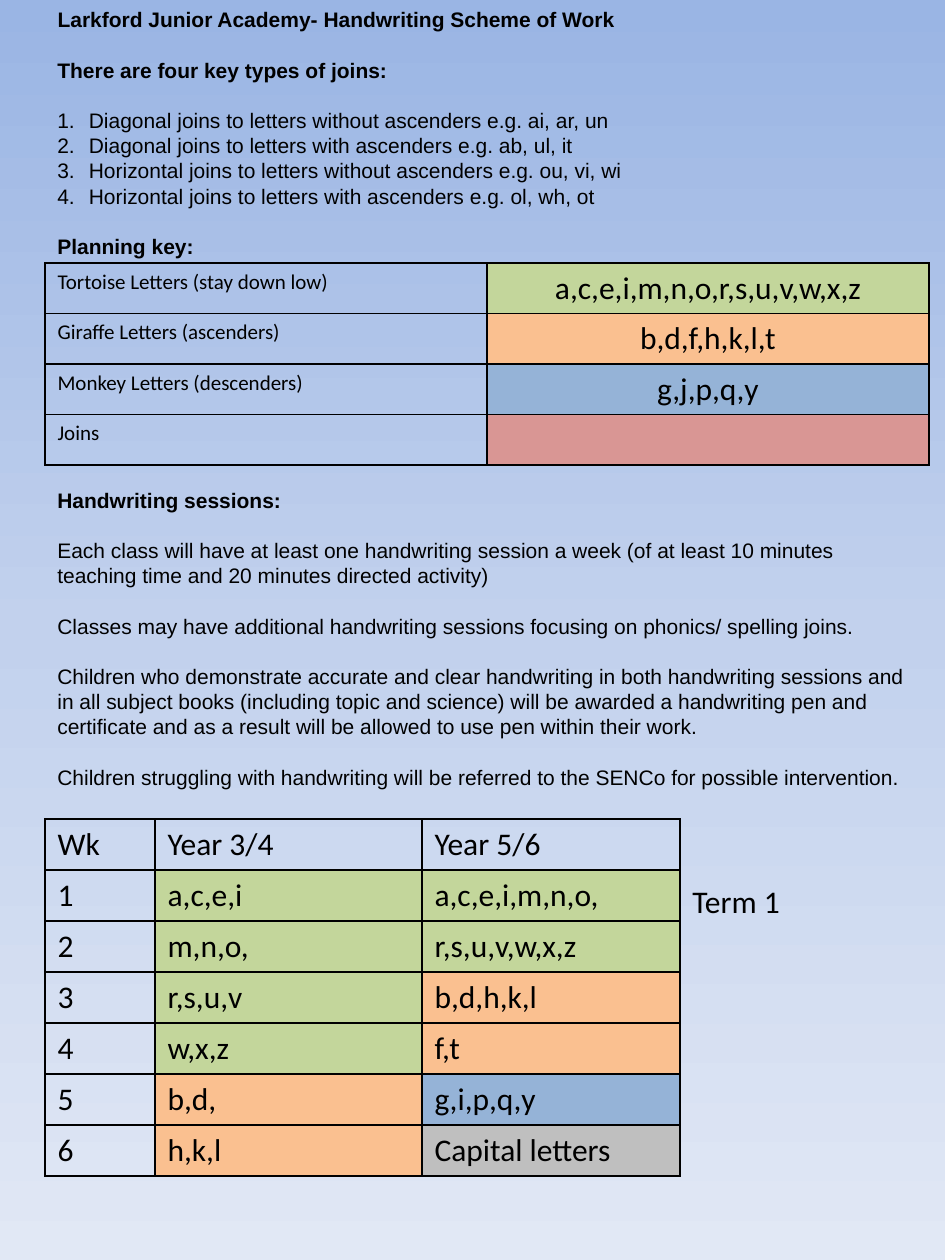
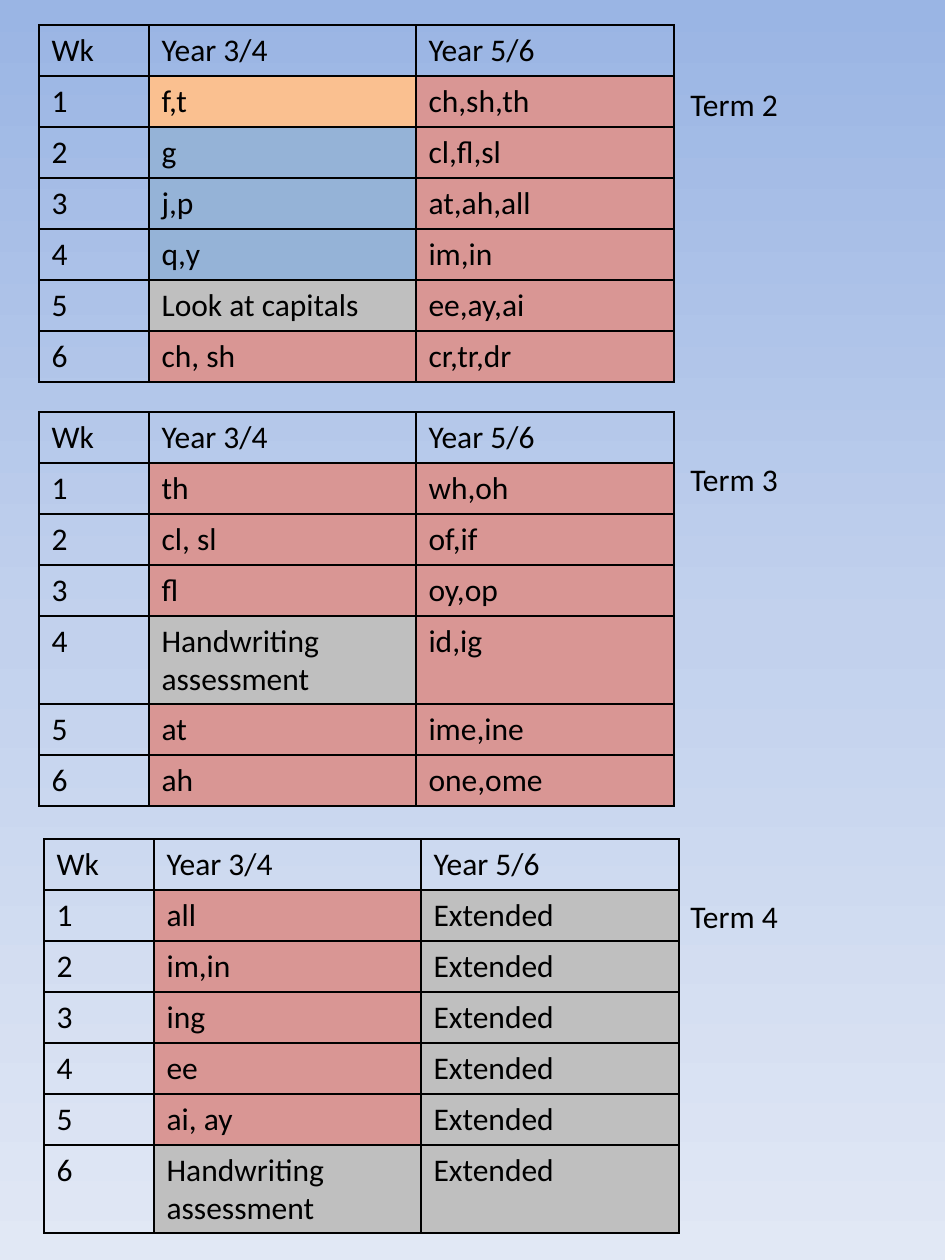
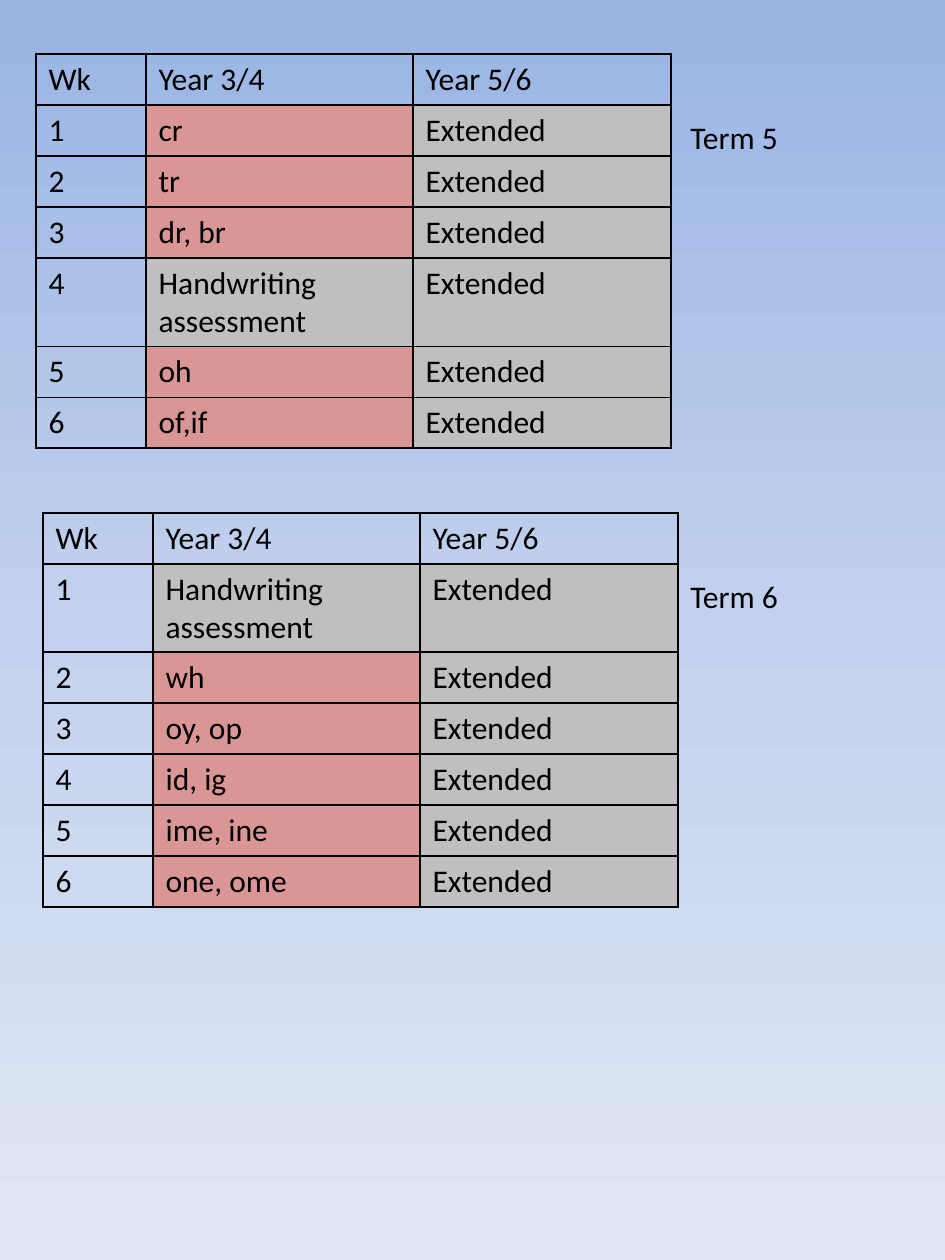
from dataclasses import dataclass

from pptx import Presentation
from pptx.dml.color import RGBColor
from pptx.enum.text import MSO_ANCHOR, MSO_AUTO_SIZE, PP_ALIGN
from pptx.oxml import parse_xml
from pptx.oxml.ns import nsdecls
from pptx.util import Emu, Pt
from copy import deepcopy

TOP = MSO_ANCHOR.TOP
GROW = MSO_AUTO_SIZE.SHAPE_TO_FIT_TEXT
FIXED = MSO_AUTO_SIZE.NONE
LEFT, CENTER = PP_ALIGN.LEFT, PP_ALIGN.CENTER


@dataclass(frozen=True)
class Theme:
    ink: str = "000000"
    low: str = "C3D69B"
    tall: str = "FAC090"
    tail: str = "95B3D7"
    join: str = "D99694"
    other: str = "BFBFBF"
    sky: tuple = ((0, "9AB5E4"), (0.5, "C2D1ED"), (1, "E1E8F5"))
    prose: str = "Arial"
    grid: str = "Calibri"
    small: int = 12
    large: int = 18
    line: float = 14.4


THEME = Theme()

# Planning key: label, letters, colour
KEY = [
    ("Tortoise Letters (stay down low)", "a,c,e,i,m,n,o,r,s,u,v,w,x,z", THEME.low),
    ("Giraffe Letters (ascenders)", "b,d,f,h,k,l,t", THEME.tall),
    ("Monkey Letters (descenders)", "g,j,p,q,y", THEME.tail),
    ("Joins", "", THEME.join),
]

TITLE = "Larkford Junior Academy- Handwriting Scheme of Work"
JOINS = [
    "Diagonal joins to letters without ascenders e.g. ai, ar, un",
    "Diagonal joins to letters with ascenders e.g. ab, ul, it",
    "Horizontal joins to letters without ascenders e.g. ou, vi, wi",
    "Horizontal joins to letters with ascenders e.g. ol, wh, ot",
]
RULES = [
    "Each class will have at least one handwriting session a week (of at least "
    "10 minutes teaching time and 20 minutes directed activity)",
    "Classes may have additional handwriting sessions focusing on phonics/ spelling joins.",
    "Children who demonstrate accurate and clear handwriting in both handwriting "
    "sessions and in all subject books (including topic and science) will be awarded "
    "a handwriting pen and certificate and as a result will be allowed to use pen "
    "within their work.",
    "Children struggling with handwriting will be referred to the SENCo for "
    "possible intervention.",
]

# Weekly plans
TEST = "Handwriting assessment"
EXTRA = ["Extended"] * 6
HEAD = ("Wk", "Year 3/4", "Year 5/6")
COLS = (110, 267, 258)
ROW, DEEP = 51, 88

# Each slide's terms: table corner, label corner, Year 3/4, Year 5/6
PLANS = [
    [
        ((45, 819), (680, 876),
         ["a,c,e,i", "m,n,o,", "r,s,u,v", "w,x,z", "b,d,", "h,k,l"],
         ["a,c,e,i,m,n,o,", "r,s,u,v,w,x,z", "b,d,h,k,l", "f,t", "g,i,p,q,y",
          "Capital letters"]),
    ],
    [
        ((39, 25), (678, 79),
         ["f,t", "g", "j,p", "q,y", "Look at capitals", "ch, sh"],
         ["ch,sh,th", "cl,fl,sl", "at,ah,all", "im,in", "ee,ay,ai", "cr,tr,dr"]),
        ((39, 412), (678, 454),
         ["th", "cl, sl", "fl", TEST, "at", "ah"],
         ["wh,oh", "of,if", "oy,op", "id,ig", "ime,ine", "one,ome"]),
        ((44, 839), (678, 891),
         ["all", "im,in", "ing", "ee", "ai, ay", TEST], EXTRA),
    ],
    [
        ((36, 54), (678, 112),
         ["cr", "tr", "dr, br", TEST, "oh", "of,if"], EXTRA),
        ((43, 513), (678, 571),
         [TEST, "wh", "oy, op", "id, ig", "ime, ine", "one, ome"], EXTRA),
    ],
]


def px(n):
    return Emu(round(n * 914400 / 126))


def place(shape, left, top, width, height):
    shape.left, shape.top = px(left), px(top)
    shape.width, shape.height = px(width), px(height)


def style(para, face, size, bold=False, align=LEFT):
    para.font.name, para.font.size, para.font.bold = face, Pt(size), bold
    para.font.color.rgb = RGBColor.from_string(THEME.ink)
    para.alignment = align


def paint_sky(master):
    """Shared background gradient, running down the page."""
    fill = master.background.fill
    fill.gradient()
    fill.gradient_angle = 270
    stops = master.element.xpath("./p:cSld/p:bg//a:gsLst")[0]
    stops.append(deepcopy(stops[-1]))
    for stop, (pos, tint) in zip(fill.gradient_stops, THEME.sky):
        stop.position = pos
        stop.color.rgb = RGBColor.from_string(tint)


def add_title(slide, text):
    title = slide.shapes.title
    place(title, 45, 0, 843, 38)
    frame = title.text_frame
    frame.text = text
    frame.vertical_anchor, frame.auto_size = TOP, FIXED
    para = frame.paragraphs[0]
    style(para, THEME.prose, THEME.small, bold=True)
    para.line_spacing = Pt(THEME.line)


def add_box(slide, *area):
    box = slide.shapes.add_textbox(*map(px, area))
    box.text_frame.word_wrap = True
    box.text_frame.auto_size = GROW
    return box.text_frame


def add_prose(slide, area, items):
    """Items are (text, bold, gap above)."""
    frame = add_box(slide, *area)
    frame.text = "\n".join(text for text, _, _ in items)
    for para, (_, bold, gap) in zip(frame.paragraphs, items):
        style(para, THEME.prose, THEME.small, bold)
        para.line_spacing = Pt(THEME.line)
        para.space_before = Pt(THEME.line if gap else 0)
    return frame


def number(para):
    props = para._p.get_or_add_pPr()
    props.set("marL", str(px(31.5)))
    props.set("indent", str(-px(31.5)))
    mark = parse_xml(f'<a:buAutoNum {nsdecls("a")} type="arabicPeriod"/>')
    props.find("{*}defRPr").addprevious(mark)


def set_cell(cell, text, tint=None, size=THEME.large, align=LEFT):
    cell.text = text
    style(cell.text_frame.paragraphs[0], THEME.grid, size, align=align)
    props = cell._tc.get_or_add_tcPr()
    for side in "LRTB":
        props.append(parse_xml(
            f'<a:ln{side} {nsdecls("a")} w="12700"><a:solidFill>'
            f'<a:srgbClr val="{THEME.ink}"/></a:solidFill></a:ln{side}>'))
    if tint:
        cell.fill.solid()
        cell.fill.fore_color.rgb = RGBColor.from_string(tint)
    else:
        cell.fill.background()


def add_grid(slide, left, top, cols, rows):
    area = map(px, (left, top, sum(cols), sum(rows)))
    table = slide.shapes.add_table(len(rows), len(cols), *area).table
    table.first_row = table.horz_banding = False
    for col, width in zip(table.columns, cols):
        col.width = px(width)
    for row, height in zip(table.rows, rows):
        row.height = px(height)
    return table


def add_key(slide):
    table = add_grid(slide, 45, 263, (442, 442), [50] * len(KEY))
    for i, (label, letters, tint) in enumerate(KEY):
        set_cell(table.cell(i, 0), label, size=THEME.small)
        set_cell(table.cell(i, 1), letters, tint, align=CENTER)


def tint_of(text):
    """Words are grey, groups are joins, single letters follow the key."""
    first = text.split(",")[0]
    if first[0].isupper():
        return THEME.other
    if len(first) > 1:
        return THEME.join
    return next(tint for _, letters, tint in KEY if first in letters)


def add_plan(slide, corner, lower, upper):
    heights = [ROW] + [DEEP if text == TEST else ROW for text in lower]
    table = add_grid(slide, *corner, COLS, heights)
    for j, text in enumerate(HEAD):
        set_cell(table.cell(0, j), text)
    for week, pair in enumerate(zip(lower, upper), 1):
        set_cell(table.cell(week, 0), str(week))
        for j, text in enumerate(pair, 1):
            set_cell(table.cell(week, j), text, tint_of(text))


def add_label(slide, corner, text):
    frame = add_box(slide, *corner, 179, 50)
    frame.text = text
    style(frame.paragraphs[0], THEME.grid, THEME.large)


def add_intro(slide):
    add_title(slide, TITLE)
    items = [("There are four key types of joins:", True, False)]
    items += [(text, False, i == 0) for i, text in enumerate(JOINS)]
    items.append(("Planning key:", True, True))
    frame = add_prose(slide, (45, 51, 843, 214), items)
    for para in frame.paragraphs[1:-1]:
        number(para)
    add_key(slide)
    items = [("Handwriting sessions:", True, False)]
    items += [(text, False, True) for text in RULES]
    add_prose(slide, (45, 481, 883, 315), items)


def main():
    prs = Presentation()
    prs.slide_width, prs.slide_height = px(945), px(1260)
    paint_sky(prs.slide_master)
    titled, blank = prs.slide_layouts[5], prs.slide_layouts[6]

    term = 0
    for i, plans in enumerate(PLANS):
        slide = prs.slides.add_slide(blank if i else titled)
        if i == 0:
            add_intro(slide)
        for corner, spot, lower, upper in plans:
            term += 1
            add_plan(slide, corner, lower, upper)
            add_label(slide, spot, f"Term {term}")

    prs.save("out.pptx")


if __name__ == "__main__":
    main()
